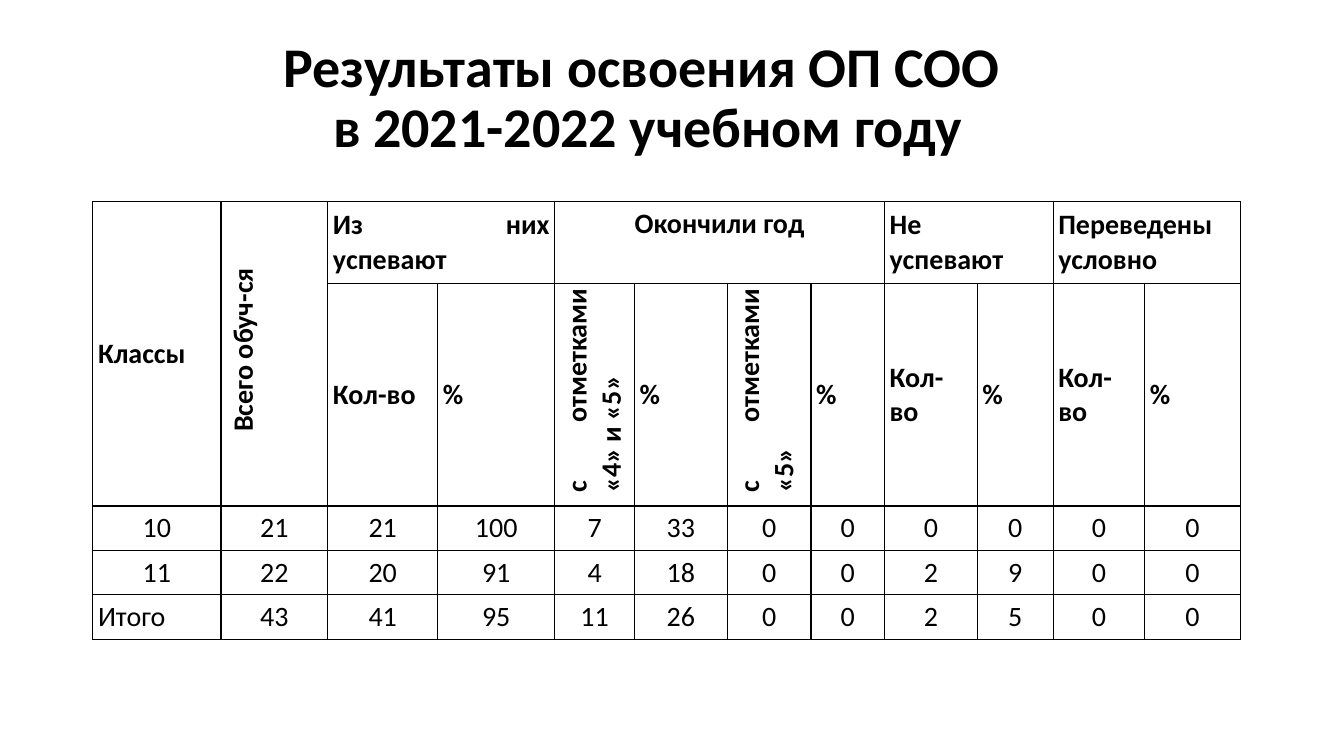
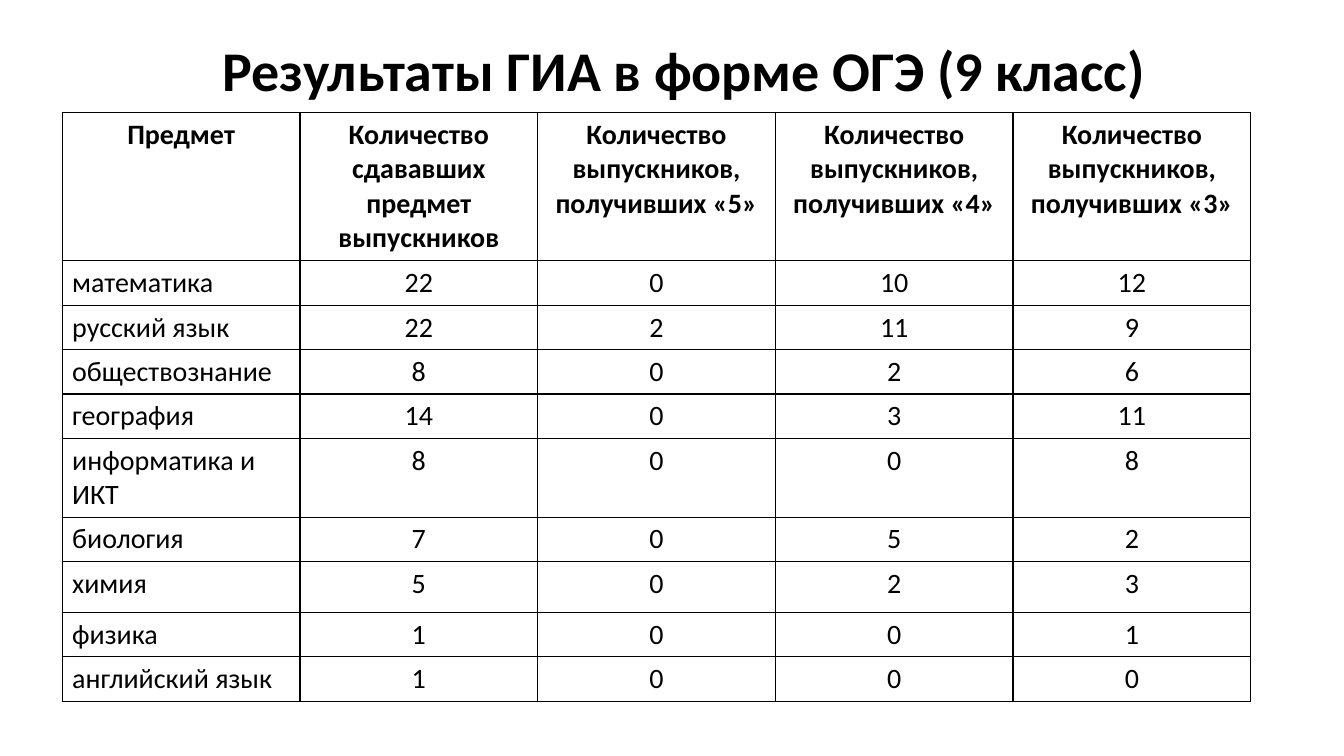
"""Build two slides of school results, each a title above a ruled table."""
import dataclasses

import pptx
import pptx.dml.color
import pptx.enum.text
import pptx.oxml
import pptx.oxml.ns
import pptx.slide
import pptx.table
import pptx.text.text
import pptx.util

Cm = pptx.util.Cm
Pt = pptx.util.Pt
Align = pptx.enum.text.PP_ALIGN
Anchor = pptx.enum.text.MSO_ANCHOR

INK = pptx.dml.color.RGBColor(0, 0, 0)
PAPER = pptx.dml.color.RGBColor(255, 255, 255)
FONT = "Calibri"


@dataclasses.dataclass(frozen=True)
class Cell:
    row: int
    col: int
    text: str
    rows: int = 1
    cols: int = 1
    bold: bool = True
    align: Align = Align.JUSTIFY
    anchor: Anchor = Anchor.MIDDLE
    turned: bool = False


@dataclasses.dataclass(frozen=True)
class Grid:
    left: float
    top: float
    cols: list[float]
    rows: list[float]
    pad: float
    cells: list[Cell]


def write(frame: pptx.text.text.TextFrame, text: str, *, size: int = 20,
          bold: bool = False, align: Align = Align.CENTER,
          space: float = 1.0, indent: float = 0) -> None:
    para = frame.paragraphs[0]
    para.text = text
    para.alignment = align
    para.line_spacing = space
    if indent:
        para._p.get_or_add_pPr().set("marL", str(Cm(indent)))
    for run in para.runs:
        run.font.name = FONT
        run.font.size = Pt(size)
        run.font.bold = bold
        run.font.color.rgb = INK


def title(slide: pptx.slide.Slide, text: str, left: float, top: float,
          width: float) -> None:
    box = slide.shapes.add_textbox(Cm(left), Cm(top), Cm(width), Cm(3.68))
    box.text_frame.word_wrap = True
    box.text_frame.vertical_anchor = Anchor.MIDDLE
    write(box.text_frame, text, size=40, bold=True, space=0.9)


def rule(cell: pptx.table._Cell) -> None:
    props = cell._tc.get_or_add_tcPr()
    for side in "LRTB":
        props.append(pptx.oxml.parse_xml(
            f'<a:ln{side} {pptx.oxml.ns.nsdecls("a")} w="{Pt(1)}">'
            f'<a:solidFill><a:srgbClr val="{INK}"/></a:solidFill></a:ln{side}>'))
    cell.fill.solid()
    cell.fill.fore_color.rgb = PAPER


def fill(cell: pptx.table._Cell, item: Cell, pad: float) -> None:
    cell.margin_left = cell.margin_right = Cm(pad)
    cell.margin_top = cell.margin_bottom = Cm(0.13)
    cell.vertical_anchor = item.anchor
    if item.turned:
        cell._tc.get_or_add_tcPr().set("vert", "vert270")
    write(cell.text_frame, item.text, bold=item.bold, align=item.align,
          indent=0.2 if item.turned else 0)


def draw(slide: pptx.slide.Slide, grid: Grid) -> None:
    table = slide.shapes.add_table(
        len(grid.rows), len(grid.cols), Cm(grid.left), Cm(grid.top),
        Cm(sum(grid.cols)), Cm(sum(grid.rows))).table
    table.first_row = table.horz_banding = False
    for col, width in zip(table.columns, grid.cols):
        col.width = Cm(width)
    for row, height in zip(table.rows, grid.rows):
        row.height = Cm(height)
    for cell in table.iter_cells():
        rule(cell)
    for item in grid.cells:
        cell = table.cell(item.row, item.col)
        if item.rows * item.cols > 1:
            cell.merge(table.cell(item.row + item.rows - 1,
                                  item.col + item.cols - 1))
        fill(cell, item, grid.pad)


def body(first: int, lines: list[tuple[str, str]], anchor: Anchor,
         left: Align) -> list[Cell]:
    cells = []
    for row, (name, marks) in enumerate(lines, first):
        for col, text in enumerate([name, *marks.split()]):
            side = Align.CENTER if text.isdigit() else left
            cells.append(Cell(row, col, text, bold=False, align=side,
                              anchor=anchor))
    return cells


def levels() -> Grid:
    head = [
        Cell(0, 0, "Классы", rows=2),
        Cell(0, 1, "Всего обуч-ся", rows=2, align=Align.CENTER,
             anchor=Anchor.TOP, turned=True),
        Cell(0, 2, "Из них\nуспевают", cols=2),
        Cell(0, 4, "Окончили год", cols=4, align=Align.CENTER,
             anchor=Anchor.TOP),
        Cell(0, 8, "Не \nуспевают", cols=2),
        Cell(0, 10, "Переведены\nусловно", cols=2),
        Cell(1, 4, "с отметками\n«4» и «5»", turned=True),
        Cell(1, 6, "с отметками\n«5»", turned=True),
    ]
    head += [Cell(1, col, "Кол-во") for col in (2, 8, 10)]
    head += [Cell(1, col, "%") for col in range(3, 12, 2)]
    lines = [
        ("10", "21 21 100 7 33 0 0 0 0 0 0"),
        ("11", "22 20 91 4 18 0 0 2 9 0 0"),
        ("Итого", "43 41 95 11 26 0 0 2 5 0 0"),
    ]
    return Grid(
        2.34, 5.08,
        [3.23, 2.69, 2.77, 2.95, 2.01, 2.34, 2.11, 1.85, 2.34, 1.91, 2.31, 2.41],
        [2.06, 5.61] + [1.12] * len(lines), 0.13,
        head + body(2, lines, Anchor.MIDDLE, Align.JUSTIFY))


def exams() -> Grid:
    names = ["Предмет", "Количество сдававших предмет выпускников"]
    names += [f"Количество выпускников, получивших «{mark}»"
              for mark in (5, 4, 3)]
    head = [Cell(0, col, name, align=Align.CENTER, anchor=Anchor.TOP)
            for col, name in enumerate(names)]
    lines = [
        ("математика", "22 0 10 12"),
        ("русский язык", "22 2 11 9"),
        ("обществознание", "8 0 2 6"),
        ("география", "14 0 3 11"),
        ("информатика и ИКТ", "8 0 0 8"),
        ("биология", "7 0 5 2"),
        ("химия", "5 0 2 3"),
        ("физика", "1 0 0 1"),
        ("английский язык", "1 0 0 0"),
    ]
    tall = {"информатика и ИКТ": 1.98, "химия": 1.28}
    return Grid(
        1.57, 2.84, [5.99] * len(names),
        [3.73] + [tall.get(name, 1.12) for name, _ in lines], 0.25,
        head + body(1, lines, Anchor.TOP, Align.LEFT))


def main() -> None:
    deck = pptx.Presentation()
    deck.slide_width, deck.slide_height = Cm(33.87), Cm(19.05)
    blank = deck.slide_layouts[6]

    slide = deck.slides.add_slide(blank)
    title(slide, "Результаты освоения ОП СОО \nв 2021-2022 учебном году",
          1.02, 0.66, 30.61)
    draw(slide, levels())

    slide = deck.slides.add_slide(blank)
    title(slide, "Результаты ГИА в форме ОГЭ (9 класс)", 2.62, 0, 29.21)
    draw(slide, exams())

    deck.save("out.pptx")


if __name__ == "__main__":
    main()
